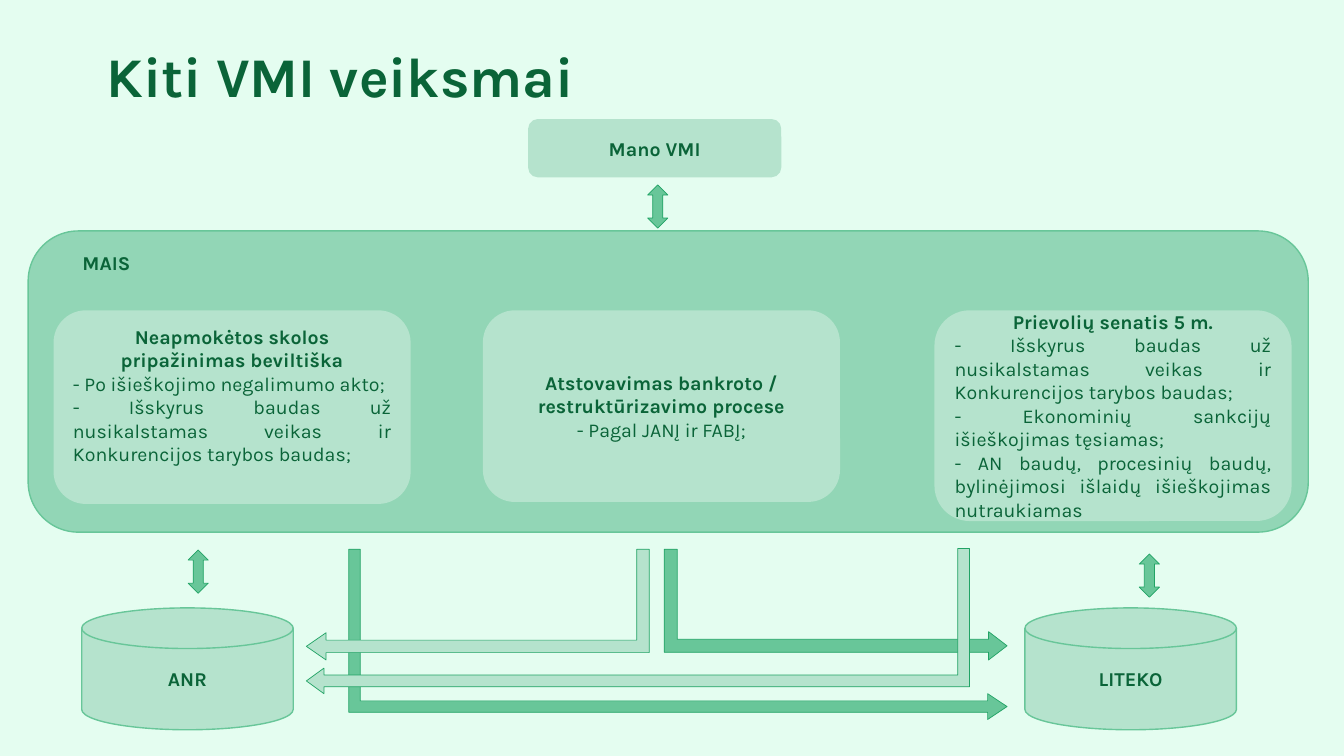
from pptx import Presentation
from pptx.dml.color import RGBColor as Rgb
from pptx.enum.shapes import MSO_SHAPE as Kind
from pptx.enum.text import MSO_ANCHOR as Anchor, PP_ALIGN as Align
from pptx.util import Cm, Pt

HUE = {"back": "E4FDF0", "panel": "92D6B6", "pale": "B5E3CD",
       "mid": "68C699", "edge": "21A365", "ink": "0A6438"}
TITLE = "Kiti VMI veiksmai"
PORTAL = "Mano VMI"
SYSTEM = "MAIS"
CARDS = [
    (1.35, 4.88, 0.72, Align.JUSTIFY, "Neapmokėtos skolos pripažinimas beviltiška", [
        "- Po išieškojimo negalimumo akto;",
        "- Išskyrus baudas už nusikalstamas veikas ir Konkurencijos tarybos baudas;"]),
    (12.17, 4.83, 0.13, Align.CENTER, "Atstovavimas bankroto / restruktūrizavimo procese", [
        "- Pagal JANĮ ir FABĮ;"]),
    (23.55, 5.31, 0.13, Align.JUSTIFY, "Prievolių senatis 5 m.", [
        "- Išskyrus baudas už nusikalstamas veikas ir Konkurencijos tarybos baudas;",
        "- Ekonominių sankcijų išieškojimas tęsiamas;",
        "- AN baudų, procesinių baudų, bylinėjimosi išlaidų išieškojimas nutraukiamas"]),
]
STORES = [("ANR", 2.06), ("LITEKO", 25.83)]
BENDS = [
    ((8.79, 13.84, 16.59, 4.29), "mid", True, (0.067, 0.076, 0.114, 0)),
    ((7.72, 13.84, 8.64, 2.79), "pale", False, (0.113, 0.123, 0.178, 0)),
    ((16.74, 13.84, 8.64, 2.79), "mid", True, (0.117, 0.128, 0.167, 0)),
    ((7.72, 13.82, 16.71, 3.66), "pale", False, (0.081, 0.088, 0.121, 0)),
]
LINKS = [(16.03, 4.95), (4.45, 14.15), (28.42, 14.25)]

deck = Presentation()
deck.slide_width, deck.slide_height = Cm(33.87), Cm(19.05)
slide = deck.slides.add_slide(deck.slide_layouts[6])
slide.background.fill.solid()
slide.background.fill.fore_color.rgb = Rgb.from_string(HUE["back"])


def draw(kind, at, fill, line=None, width=1):
    shape = slide.shapes.add_shape(kind, *map(Cm, at))
    shape.shadow.inherit = False
    shape.fill.solid()
    shape.fill.fore_color.rgb = Rgb.from_string(HUE[fill])
    if line:
        shape.line.color.rgb = Rgb.from_string(HUE[line])
        shape.line.width = Pt(width)
    else:
        shape.line.fill.background()
    return shape


def write(shape, text, size=14, bold=True, align=Align.CENTER, anchor=Anchor.MIDDLE, more=False):
    frame = shape.text_frame
    frame.word_wrap = True
    frame.vertical_anchor = anchor
    para = frame.add_paragraph() if more else frame.paragraphs[0]
    para.alignment = align
    run = para.add_run()
    run.text = text
    font = run.font
    font.name, font.size, font.bold = "Karla", Pt(size), bold
    font.color.rgb = Rgb.from_string(HUE["ink"])


panel = draw(Kind.ROUNDED_RECTANGLE, (0.71, 5.82, 32.26, 7.59), "panel", "mid")
panel.text_frame.margin_left = Cm(1)
write(panel, SYSTEM, align=Align.LEFT, anchor=Anchor.TOP)

title = slide.shapes.add_textbox(*map(Cm, (2.44, 0.91, 25.55, 1.96)))
write(title, TITLE, size=40, align=Align.LEFT, anchor=Anchor.TOP)

write(draw(Kind.ROUNDED_RECTANGLE, (13.31, 3, 6.38, 1.47), "pale"), PORTAL)

for left, high, foot, align, head, notes in CARDS:
    card = draw(Kind.ROUNDED_RECTANGLE, (left, 7.82, 9, high), "pale")
    card.text_frame.margin_bottom = Cm(foot)
    write(card, head)
    for note in notes:
        write(card, note, bold=False, align=align, more=True)

for name, left in STORES:
    write(draw(Kind.FLOWCHART_MAGNETIC_DISK, (left, 15.32, 5.33, 3.07), "pale", "mid"), name)

for at, fill, flip, shares in BENDS:
    bend = draw(Kind.BENT_ARROW, at, fill, "edge", 0.5)
    bend.rotation = 180
    for spot, share in enumerate(shares):
        bend.adjustments[spot] = share
    if flip:
        bend.element.spPr.xfrm.set("flipH", "1")

for left, top in LINKS:
    draw(Kind.LEFT_RIGHT_ARROW, (left, top, 1.09, 0.51), "mid", "edge", 0.5).rotation = 90

deck.save("out.pptx")
